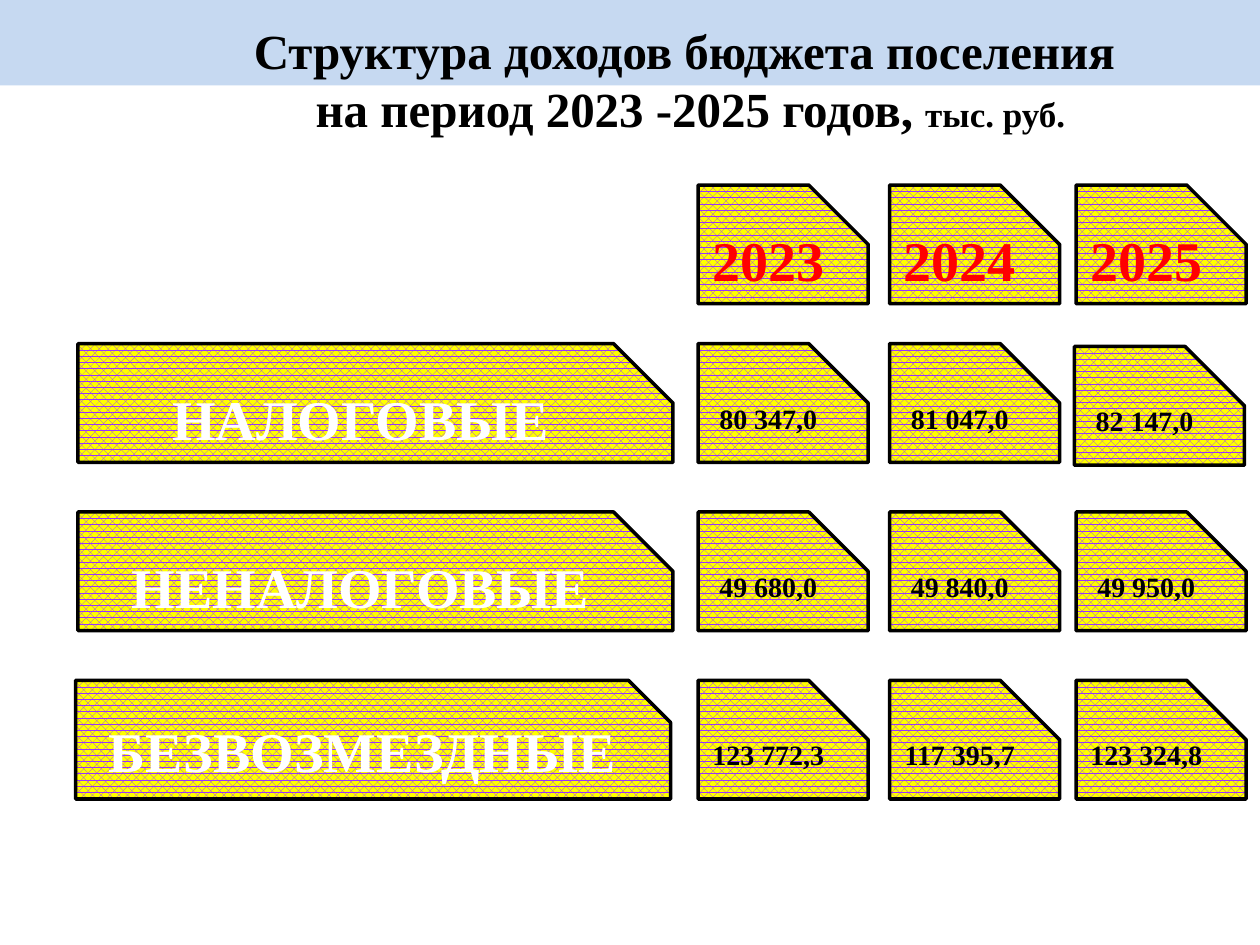
from pptx import Presentation
from pptx.dml.color import RGBColor
from pptx.enum.dml import MSO_PATTERN
from pptx.enum.shapes import MSO_SHAPE
from pptx.enum.text import MSO_ANCHOR, PP_ALIGN
from pptx.util import Pt

RECT = MSO_SHAPE.RECTANGLE
SNIP = MSO_SHAPE.SNIP_1_RECTANGLE
PATTERN = MSO_PATTERN.PERCENT_70
CENTER = PP_ALIGN.CENTER
MIDDLE = MSO_ANCHOR.MIDDLE

FONT = "Times New Roman"
BLACK, WHITE, RED = "000000", "FFFFFF", "FF0000"
TITLE = [
    [("Структура доходов бюджета поселения ", 28)],
    [("на период 2023 -2025 годов, ", 28), ("тыс. руб.", 20)],
]
YEARS = ["2023", "2024", "2025"]
ROWS = [
    ("НАЛОГОВЫЕ", 44.6, 0.5, ["80 347,0", "81 047,0", "82 147,0"]),
    ("НЕНАЛОГОВЫЕ", 44.6, 0.5, ["49 680,0", "49 840,0", "49 950,0"]),
    ("БЕЗВОЗМЕЗДНЫЕ", 43.2, 0.355, ["123 772,3", "117 395,7", "123 324,8"]),
]
NUDGES = {"82 147,0": (-1, 1.6)}

COLUMNS = [398.9, 508.3, 614.9]
HEADER_TOP, FIRST_TOP, ROW_STEP = 105.8, 196.4, 96.2
LABEL_W, CELL_W, CARD_H = 340, 97.2, 67.8


def rgb(value):
    return RGBColor.from_string(value)


def style(p, size, color):
    p.alignment = CENTER
    p.font.name = FONT
    p.font.size = Pt(size)
    p.font.bold = True
    p.font.color.rgb = rgb(color)


def add_card(s, text, left, top, width, size, color, snip=0.5):
    sp = s.shapes.add_shape(SNIP, Pt(left), Pt(top), Pt(width), Pt(CARD_H))
    sp.shadow.inherit = False
    sp.adjustments[0] = snip
    sp.fill.patterned()
    sp.fill.pattern = PATTERN
    sp.fill.fore_color.rgb = rgb("9933FF")
    sp.fill.back_color.rgb = rgb("FFFF00")
    sp.line.color.rgb = rgb(BLACK)
    sp.line.width = Pt(2)
    tf = sp.text_frame
    tf.word_wrap = True
    tf.vertical_anchor = MIDDLE
    p = tf.paragraphs[0]
    p.text = text
    style(p, size, color)


def add_title(s):
    tf = s.shapes.add_textbox(Pt(82.8), Pt(7.9), Pt(623.5), Pt(74.9)).text_frame
    tf.word_wrap = True
    for i, runs in enumerate(TITLE):
        p = tf.add_paragraph() if i else tf.paragraphs[0]
        style(p, 28, BLACK)
        for text, size in runs:
            r = p.add_run()
            r.text = text
            r.font.size = Pt(size)


def main():
    prs = Presentation()
    prs.slide_width, prs.slide_height = Pt(720), Pt(540)
    s = prs.slides.add_slide(prs.slide_layouts[6])

    band = s.shapes.add_shape(RECT, 0, 0, Pt(720), Pt(48.8))
    band.shadow.inherit = False
    band.fill.solid()
    band.fill.fore_color.rgb = rgb("C6D9F1")
    band.line.fill.background()
    add_title(s)

    for year, left in zip(YEARS, COLUMNS):
        add_card(s, year, left, HEADER_TOP, CELL_W, 32, RED)
    for i, (label, label_left, snip, values) in enumerate(ROWS):
        top = FIRST_TOP + i * ROW_STEP
        add_card(s, label, label_left, top, LABEL_W, 32, WHITE, snip)
        for value, left in zip(values, COLUMNS):
            dx, dy = NUDGES.get(value, (0, 0))
            add_card(s, value, left + dx, top + dy, CELL_W, 16, BLACK)

    prs.save("out.pptx")


if __name__ == "__main__":
    main()
